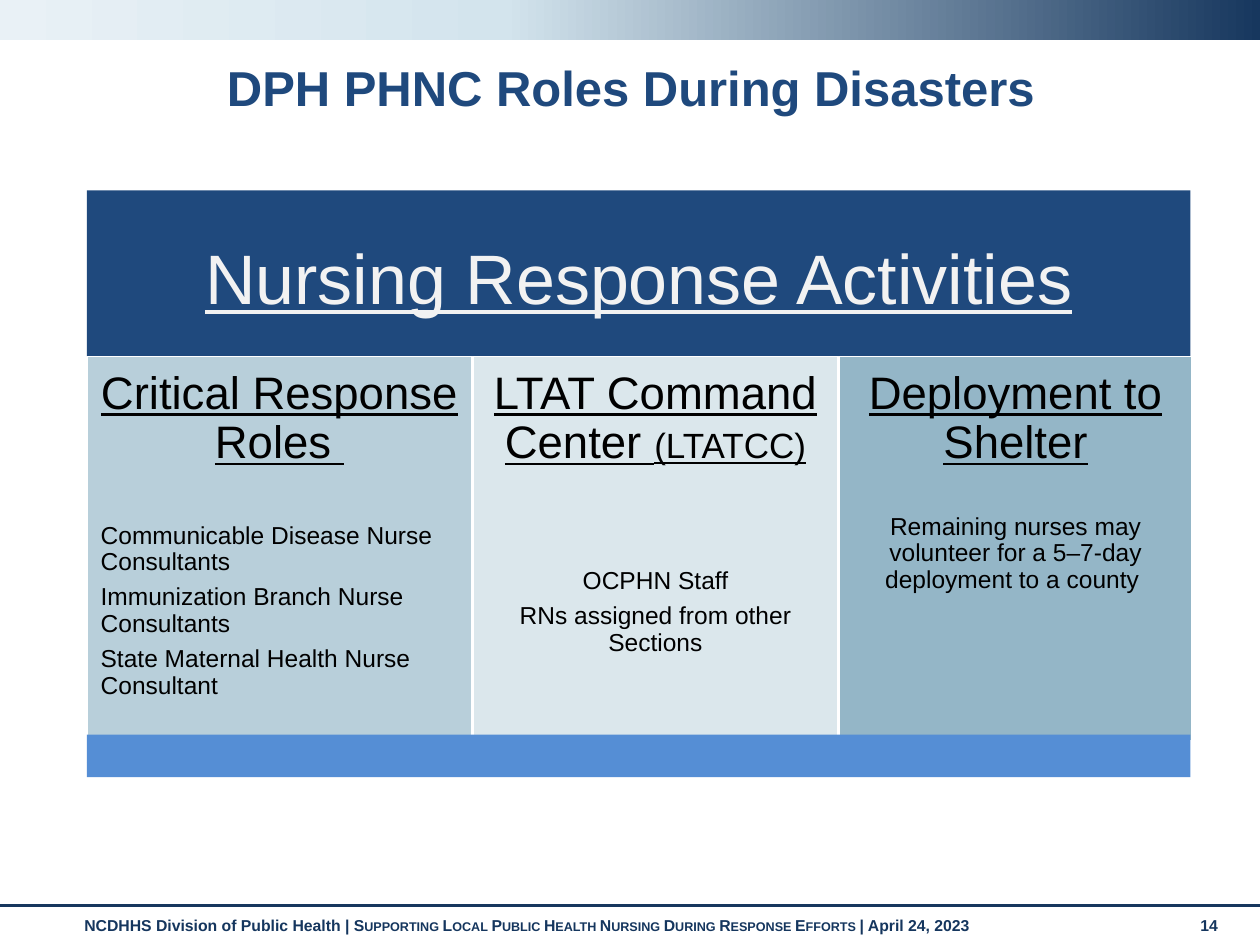
from copy import deepcopy
from dataclasses import dataclass

from lxml import etree
from pptx import Presentation
from pptx.dml.color import RGBColor
from pptx.enum.shapes import MSO_CONNECTOR, MSO_SHAPE
from pptx.enum.text import MSO_ANCHOR, PP_ALIGN
from pptx.oxml.ns import qn
from pptx.util import Cm, Pt

RECT = MSO_SHAPE.RECTANGLE
LINE = MSO_CONNECTOR.STRAIGHT
TOP, MIDDLE = MSO_ANCHOR.TOP, MSO_ANCHOR.MIDDLE
LEFT, CENTER = PP_ALIGN.LEFT, PP_ALIGN.CENTER

FONT = "Arial"
HEX = {
    "navy": "17375E", "foot": "15365E", "title": "1F497D", "bar": "558ED5",
    "sky": "D3E4ED", "mist": "E9F1F6", "light": "F2F2F2", "white": "FFFFFF",
    "black": "000000", "pale": "DBE7EC", "mid": "B8CFDA", "deep": "94B6C7",
}
WIDE, HIGH = 25.4, 19.05
EDGE, SPAN = 1.75, 22.25
COL_TOP = 7.19


@dataclass
class Run:
    text: str
    size: float
    color: str = "black"
    bold: bool = False
    under: bool = False
    small: bool = False


@dataclass
class Column:
    left: float
    width: float
    height: float
    fill: str
    head: list[Run]
    gap: float
    body: list[str]
    align: PP_ALIGN = CENTER


COLUMNS = [
    Column(9.53, 7.37, 7.75, "pale",
           [Run("LTAT Command Center ", 26, under=True),
            Run("(LTATCC)", 20, under=True)],
           57, ["OCPHN Staff", "RNs assigned from other Sections"]),
    Column(EDGE, 7.77, 8.18, "mid",
           [Run("Critical Response Roles ", 26, under=True)],
           31, ["Communicable Disease Nurse Consultants",
                "Immunization Branch Nurse Consultants",
                "State Maternal Health Nurse Consultant"], LEFT),
    Column(16.92, 7.11, 7.75, "deep",
           [Run("Deployment to Shelter", 26, under=True)],
           26, ["Remaining nurses may volunteer for a 5–7-day "
                "deployment to a county "]),
]


def rgb(name: str) -> RGBColor:
    return RGBColor.from_string(HEX[name])


def add_box(slide, left, top, width, height, fill=None, line=None):
    shape = slide.shapes.add_shape(
        RECT, Cm(left), Cm(top), Cm(width), Cm(height))
    shape.shadow.inherit = False
    if fill:
        shape.fill.solid()
        shape.fill.fore_color.rgb = rgb(fill)
    if line:
        shape.line.color.rgb = rgb(line)
        shape.line.width = Pt(1)
    else:
        shape.line.fill.background()
    return shape


def add_label(slide, left, top, width, height):
    return slide.shapes.add_textbox(
        Cm(left), Cm(top), Cm(width), Cm(height))


def set_frame(shape, anchor, inset=None):
    frame = shape.text_frame
    frame.word_wrap = True
    frame.vertical_anchor = anchor
    if inset is not None:
        frame.margin_left = frame.margin_right = Cm(inset)
        frame.margin_top = frame.margin_bottom = Cm(inset)
    return frame


def add_runs(para, runs: list[Run], align=LEFT, space=1.0, after=0):
    para.alignment = align
    para.line_spacing = space
    para.space_after = Pt(after)
    for item in runs:
        run = para.add_run()
        run.text = item.text
        font = run.font
        font.name, font.size = FONT, Pt(item.size)
        font.bold, font.underline = item.bold, item.under
        font.color.rgb = rgb(item.color)
        if item.small:
            run._r.get_or_add_rPr().set("cap", "small")


def add_band(slide):
    """Top band that fades from navy at the right to mist at the left."""
    band = add_box(slide, 0, 0, WIDE, 0.81)
    band.fill.gradient()
    band.fill.gradient_angle = 180
    stops = band._element.spPr.find(".//" + qn("a:gsLst"))
    stops.append(deepcopy(stops[-1]))
    fades = [(0, "navy"), (0.6, "sky"), (1, "mist")]
    for stop, (place, color) in zip(band.fill.gradient_stops, fades):
        stop.position = place
        stop.color.rgb = rgb(color)


def add_rule(slide):
    rule = slide.shapes.add_connector(
        LINE, Cm(0), Cm(18.26), Cm(WIDE), Cm(18.26))
    rule.line.color.rgb = rgb("navy")
    rule.line.width = Pt(1.75)
    etree.SubElement(rule._element.spPr, qn("a:effectLst"))


def add_column(slide, col: Column):
    box = add_box(slide, col.left, COL_TOP, col.width, col.height,
                  col.fill, "white")
    frame = set_frame(box, TOP, 0.28)
    add_runs(frame.paragraphs[0], col.head, CENTER, 0.9, col.gap)
    for text in col.body:
        add_runs(frame.add_paragraph(), [Run(text, 14)], col.align, 0.9, 5)


def add_footer(slide):
    parts = [("NCDHHS Division of Public Health | ", False),
             ("Supporting Local Public Health Nursing During "
              "Response Efforts ", True),
             ("| April 24, 2023", False)]
    for left, width, texts in [(1.45, 22.2, parts),
                               (23.95, 1.12, [("14", False)])]:
        frame = set_frame(add_label(slide, left, 18.34, width, 0.76), TOP)
        add_runs(frame.paragraphs[0],
                 [Run(text, 9, "foot", True, small=small)
                  for text, small in texts])


def main():
    deck = Presentation()
    deck.slide_width, deck.slide_height = Cm(WIDE), Cm(HIGH)
    slide = deck.slides.add_slide(deck.slide_layouts[6])

    add_footer(slide)
    add_band(slide)
    add_rule(slide)

    title = set_frame(add_label(slide, 0.28, 1.07, 24.87, 1.52), MIDDLE)
    add_runs(title.paragraphs[0],
             [Run("DPH PHNC Roles During Disasters", 28, "title", True)],
             CENTER, 0.9)

    head = add_box(slide, EDGE, 3.84, SPAN, 3.68, "title")
    add_runs(set_frame(head, MIDDLE, 0.43).paragraphs[0],
             [Run("Nursing Response Activities", 40, "light", under=True)],
             CENTER, 0.9)
    for col in COLUMNS:
        add_column(slide, col)
    add_box(slide, EDGE, 14.81, SPAN, 0.86, "bar")

    deck.save("out.pptx")


if __name__ == "__main__":
    main()
